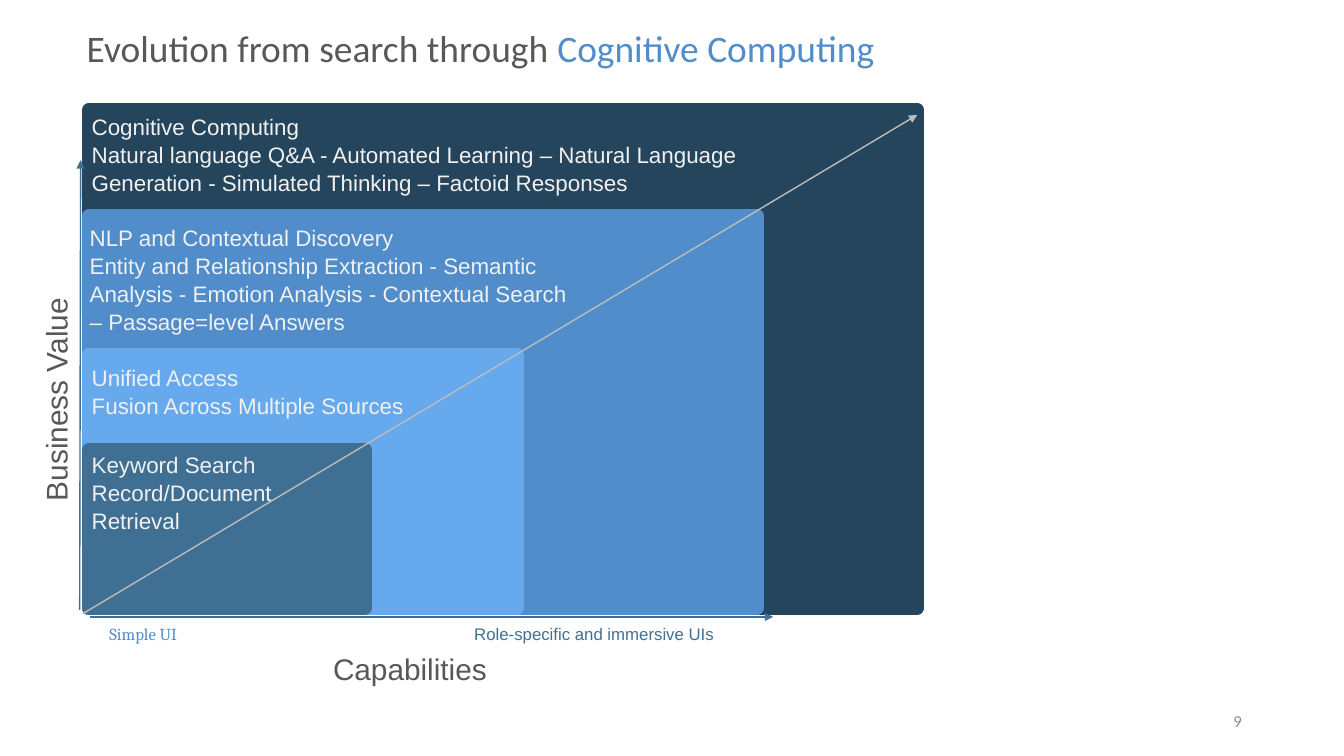
from lxml import etree
from pptx import Presentation, util as u
from pptx.dml import color
from pptx.enum import shapes, text
from pptx.oxml import ns

deck = Presentation()
deck.slide_width, deck.slide_height = u.Inches(13.33), u.Inches(7.5)
COLUMN, ROW = deck.slide_width / 100, deck.slide_height / 100
page = deck.slides.add_slide(deck.slide_layouts[5])


def rgb(value):
    return color.RGBColor.from_string(value)


def write(box, paragraphs, margins, paragraph_format, font_format):
    frame = box.text_frame
    frame.word_wrap, frame.auto_size = True, text.MSO_AUTO_SIZE.NONE
    for side, margin in zip(("left", "top", "right", "bottom"), margins):
        setattr(frame, f"margin_{side}", u.Inches(margin))
    for number, spans in enumerate(paragraphs):
        para = frame.add_paragraph() if number else frame.paragraphs[0]
        for name, value in paragraph_format.items():
            setattr(para, name, value)
        for words, shade in spans:
            span = para.add_run()
            span.text = words
            for name, value in font_format.items():
                setattr(span.font, name, value)
            span.font.color.rgb = rgb(shade)


LEFT, CENTER, RIGHT = text.PP_ALIGN.LEFT, text.PP_ALIGN.CENTER, text.PP_ALIGN.RIGHT
MIDDLE = text.MSO_ANCHOR.MIDDLE
GREY, BLUE, STEEL, PALE = "585858", "508DCA", "3F7093", "F0F0F0"
PLAIN_MARGINS = (0.1, 0.05, 0.1, 0.05)

title = page.shapes.title
title_place = {"left": 5.7 * COLUMN, "top": 1.07 * ROW,
               "width": 75.6 * COLUMN, "height": 11.07 * ROW}
for name, value in title_place.items():
    setattr(title, name, int(value))
title.text_frame.vertical_anchor = MIDDLE
write(title, [[("Evolution from search through ", GREY), ("Cognitive Computing", BLUE)]],
      PLAIN_MARGINS, {"alignment": LEFT, "line_spacing": 0.9},
      {"name": "Calibri", "size": u.Pt(26.7)})

STAGE_LEFT, STAGE_BOTTOM = 6.62, 80.4
stages = [
    (14.53, 68.25, "24455B"),
    (28.53, 56.33, BLUE),
    (46.93, 38.48, "66A9EC"),
    (59.47, 27.15, STEEL),
]
for top, right, shade in stages:
    stage = page.shapes.add_shape(
        shapes.MSO_SHAPE.RECTANGLE, int(STAGE_LEFT * COLUMN), int(top * ROW),
        int((right - STAGE_LEFT) * COLUMN), int((STAGE_BOTTOM - top) * ROW))
    stage.shadow.inherit = False
    stage.fill.solid()
    stage.fill.fore_color.rgb = stage.line.color.rgb = rgb(shade)
    stage.line.width = u.Pt(10)
    etree.SubElement(stage.line._get_or_add_ln(), ns.qn("a:round"))

descriptions = [
    (6.6, 14.13, 50.93, 10.93, ["Cognitive Computing",
     "Natural language Q&A - Automated Learning – Natural Language Generation"
     " - Simulated Thinking – Factoid Responses"]),
    (6.45, 28.8, 37.05, 10.8, ["NLP and Contextual Discovery",
     "Entity and Relationship Extraction - Semantic Analysis - Emotion Analysis"
     " - Contextual Search – Passage=level Answers"]),
    (6.6, 47.33, 25.58, 12, ["Unified Access", "Fusion Across Multiple Sources"]),
    (6.6, 58.8, 20.55, 21, ["Keyword Search", "Record/Document", "Retrieval"]),
]
for left, top, width, height, lines in descriptions:
    box = page.shapes.add_textbox(int(left * COLUMN), int(top * ROW),
                                  int(width * COLUMN), int(height * ROW))
    write(box, [[(line, PALE)] for line in lines], (0.03, 0.05, 0.1, 0.05),
          {"alignment": LEFT, "line_spacing": 1.05}, {"name": "Arial", "size": u.Pt(16)})

labels = [
    ("Business Value", -11.4, 49.6, 31.05, 6.53, 270, "Arial", 21.3, GREY),
    ("Capabilities", 6.68, 85.2, 47.63, 6.53, 0, "Arial", 21.3, GREY),
    ("Simple UI", 6.68, 81.6, 7.95, 4.53, 0, "Cambria", 12, BLUE),
    ("Role-specific and immersive UIs", 34.2, 81.6, 20.03, 4.53, 0, "Arial", 12, STEEL),
]
for words, left, top, width, height, turn, font, size, shade in labels:
    box = page.shapes.add_textbox(int(left * COLUMN), int(top * ROW),
                                  int(width * COLUMN), int(height * ROW))
    box.rotation = turn
    write(box, [[(words, shade)]], (0.13, 0.07, 0.13, 0.07),
          {"alignment": CENTER}, {"name": font, "size": u.Pt(size)})

page_number = page.shapes.add_textbox(int(70.65 * COLUMN), int(92.67 * ROW),
                                      int(22.5 * COLUMN), int(5.33 * ROW))
page_number.text_frame.vertical_anchor = MIDDLE
write(page_number, [[("9", "8C8C8C")]], PLAIN_MARGINS,
      {"alignment": RIGHT}, {"name": "Calibri", "size": u.Pt(12)})

arrows = [
    (6.15, 81.2, 68.25, 15.2, "BCBCBC"),
    (5.93, 80.67, 6, 21.2, "3E7194"),
    (6.68, 81.6, 57.53, 81.6, "3E7194"),
]
for start_x, start_y, end_x, end_y, shade in arrows:
    arrow = page.shapes.add_connector(
        shapes.MSO_CONNECTOR.STRAIGHT, int(start_x * COLUMN), int(start_y * ROW),
        int(end_x * COLUMN), int(end_y * ROW))
    arrow.line.color.rgb = rgb(shade)
    arrow.line.width = u.Pt(1)
    etree.SubElement(arrow.line._get_or_add_ln(), ns.qn("a:tailEnd"), type="triangle")
    etree.SubElement(arrow._element.spPr, ns.qn("a:effectLst"))

deck.save("out.pptx")
